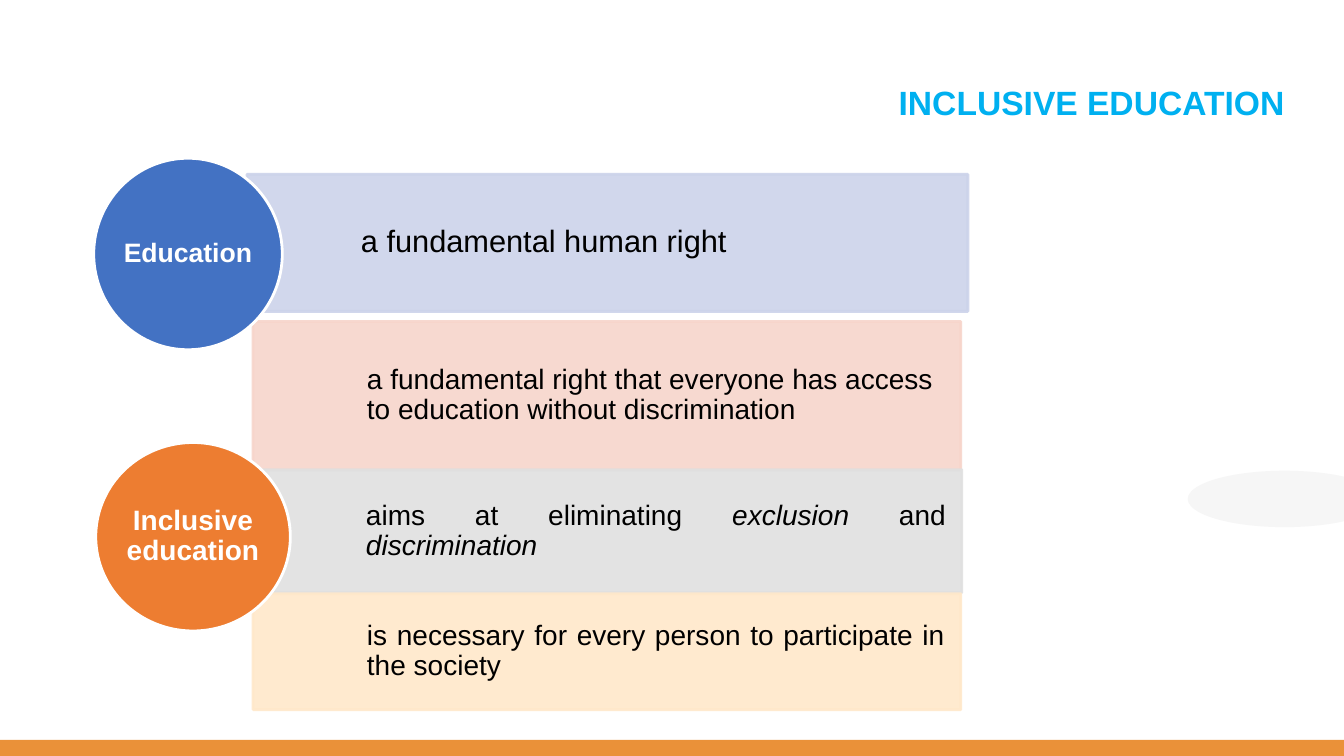
from lxml.etree import SubElement
from pptx import Presentation
from pptx.dml.color import RGBColor
from pptx.enum.shapes import MSO_SHAPE as Shape
from pptx.enum.text import MSO_ANCHOR as Anchor, PP_ALIGN as Align
from pptx.oxml.ns import qn
from pptx.util import Inches, Pt


def set_color(fill, color, opacity=100):
    fill.solid()
    fill.fore_color.rgb = RGBColor.from_string(color)
    if opacity < 100:
        color_element = fill.fore_color._xFill.find(qn("a:srgbClr"))
        SubElement(color_element, qn("a:alpha"), val=str(opacity * 1000))


class InclusiveSlide:
    font_name = "Arial"
    line_spacing = 0.9

    def __init__(self, presentation):
        self.slide = presentation.slides.add_slide(presentation.slide_layouts[5])

    def add_text(self, shape, runs, size, color, align, anchor, insets, bold=False):
        frame = shape.text_frame
        frame.word_wrap = True
        frame.vertical_anchor = anchor
        (frame.margin_left, frame.margin_top,
         frame.margin_right, frame.margin_bottom) = map(Inches, insets)
        paragraph = frame.paragraphs[0]
        paragraph.alignment = align
        paragraph.line_spacing = self.line_spacing
        font = paragraph.font
        font.name, font.size, font.bold = self.font_name, Pt(size), bold
        set_color(font.fill, color)
        for text, italic in runs:
            run = paragraph.add_run()
            run.text = text
            if italic:
                run.font.italic = True

    def title(self, text, box):
        shape = self.slide.shapes.title
        shape.left, shape.top, shape.width, shape.height = map(Inches, box)
        self.add_text(shape, [(text, False)], 24, "00B0F0", Align.RIGHT, Anchor.TOP,
                      (0.1, 0.05, 0.1, 0.05), bold=True)

    def shape(self, kind, box, color, opacity=100, outline=None):
        shape = self.slide.shapes.add_shape(kind, *map(Inches, box))
        shape.shadow.inherit = False
        set_color(shape.fill, color, opacity)
        if outline:
            set_color(shape.line.fill, outline, opacity)
            shape.line.width = Pt(2)
        else:
            shape.line.fill.background()
        return shape

    def band(self, box, color, runs, size, align):
        shape = self.shape(Shape.RECTANGLE, box, color, 90, color)
        self.add_text(shape, runs, size, "000000", align, Anchor.MIDDLE,
                      (1.13, 0.16, 0.16, 0.16))

    def circle(self, box, color, text, size):
        shape = self.shape(Shape.OVAL, box, color, outline="FFFFFF")
        self.add_text(shape, [(text, False)], size, "FFFFFF", Align.CENTER,
                      Anchor.MIDDLE, (0, 0, 0, 0), bold=True)


def main():
    presentation = Presentation()
    presentation.slide_width = Inches(13.33)
    presentation.slide_height = Inches(7.5)

    page = InclusiveSlide(presentation)
    page.shape(Shape.OVAL, (11.78, 4.67, 1.92, 0.56), "F5F5F5", 89)
    page.shape(Shape.RECTANGLE, (0, 7.34, 13.33, 0.16), "EA9139")
    page.title("INCLUSIVE EDUCATION", (3.34, 0.81, 9.5, 0.92))

    page.band((2.51, 3.19, 7.02, 1.47), "F7D5CB",
              [("a fundamental right that everyone has access to education "
                "without discrimination", False)], 20, Align.LEFT)
    page.band((2.5, 4.66, 7.04, 1.22), "E0E0E0",
              [("aims at eliminating ", False), ("exclusion", True),
               (" and ", False), ("discrimination", True)], 20, Align.JUSTIFY)
    page.band((2.51, 5.89, 7.02, 1.15), "FFE8CA",
              [("is necessary for every person to participate in the society",
                False)], 20, Align.JUSTIFY)
    page.circle((0.95, 4.39, 1.93, 1.87), "ED7D31", "Inclusive education", 20)

    page.band((2.45, 1.73, 7.15, 1.36), "CCD3EA",
              [("a fundamental human right", False)], 22, Align.LEFT)
    page.circle((0.93, 1.57, 1.87, 1.9), "4372C3", "Education", 19)

    presentation.save("out.pptx")


if __name__ == "__main__":
    main()
